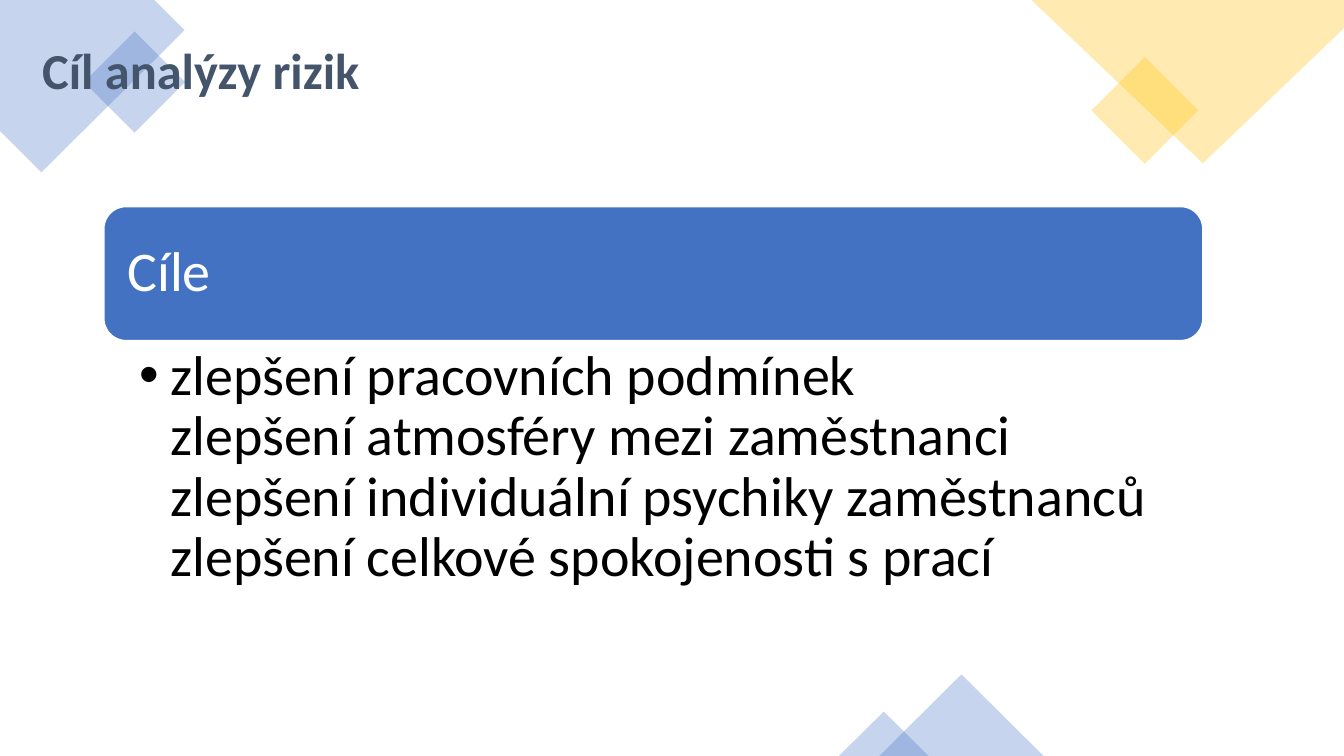
from pptx import Presentation
from pptx.dml.color import RGBColor
from pptx.enum.shapes import MSO_SHAPE as Preset
from pptx.enum.text import MSO_ANCHOR as Anchor
from pptx.oxml.ns import qn
from pptx.util import Inches, Pt
from lxml.etree import SubElement

BLUE, GOLD, WHITE, BLACK = "4472C4", "FFC000", "FFFFFF", "000000"

presentation = Presentation()
presentation.slide_width = Inches(13.33)
presentation.slide_height = Inches(7.5)
slide = presentation.slides.add_slide(presentation.slide_layouts[6])
shapes = slide.shapes


def share(*percents):
    sides = (presentation.slide_width, presentation.slide_height) * 2
    return [round(side * percent / 100) for side, percent in zip(sides, percents)]


def paint(fill, colour):
    fill.solid()
    fill.fore_color.rgb = RGBColor.from_string(colour)


corners = [
    (BLUE, [(0, 0), (11.48, 0), (13.73, 4), (3.08, 22.8), (0, 17.33)]),
    (GOLD, [(76.74, 0), (100, 0), (100, 3.73), (89.5, 21.6)]),
]
ornaments = [
    (BLUE, Preset.RECTANGLE, 315, (7.35, 6.13, 5.33, 9.47)),
    (GOLD, Preset.RECTANGLE, 315, (82.37, 9.6, 5.63, 10)),
    (BLUE, Preset.ISOSCELES_TRIANGLE, 0, (65.42, 89.2, 12.23, 10.8)),
    (BLUE, Preset.ISOSCELES_TRIANGLE, 0, (62.42, 94.13, 6.68, 5.87)),
]

decorations = []
for colour, points in corners:
    start, *others = [share(*point) for point in points]
    builder = shapes.build_freeform(*start)
    builder.add_line_segments(others, close=True)
    decorations.append((builder.convert_to_shape(), colour))
for colour, preset, rotation, box in ornaments:
    shape = shapes.add_shape(preset, *share(*box))
    shape.rotation = rotation
    decorations.append((shape, colour))

for shape, colour in decorations:
    shape.shadow.inherit = False
    shape.line.fill.background()
    paint(shape.fill, colour)
    tint = shape._element.spPr.find(".//" + qn("a:srgbClr"))
    SubElement(tint, qn("a:alpha"), val="30000")

title = shapes.add_textbox(*share(2.4, 2.67, 86.27, 12.93))
bar = shapes.add_shape(Preset.ROUNDED_RECTANGLE, *share(7.73, 27.33, 81.77, 17.73))
bar.shadow.inherit = False
paint(bar.fill, "4372C3")
paint(bar.line.fill, WHITE)
bar.line.width = Pt(1)
goals = shapes.add_textbox(*share(7.73, 45.07, 81.77, 40.27))

texts = [
    (title, ["Cíl analýzy rizik"], 36, True, "44546A", Anchor.MIDDLE, 1, (0.1, 0.05, 0.1)),
    (bar, ["Cíle"], 40, False, WHITE, Anchor.MIDDLE, 0.9, (0.17, 0.17, 0.17)),
    (goals, [
        "zlepšení pracovních podmínek",
        "zlepšení atmosféry mezi zaměstnanci",
        "zlepšení individuální psychiky zaměstnanců",
        "zlepšení celkové spokojenosti s prací",
    ], 40, False, BLACK, Anchor.TOP, 0.9, (0.35, 0.06, 0.31)),
]
for shape, lines, size, bold, colour, anchor, spacing, (left, vertical, right) in texts:
    frame = shape.text_frame
    frame.word_wrap = True
    frame.vertical_anchor = anchor
    frame.margin_left, frame.margin_right = Inches(left), Inches(right)
    frame.margin_top = frame.margin_bottom = Inches(vertical)
    paragraph = frame.paragraphs[0]
    paragraph.alignment = 1
    paragraph.line_spacing = spacing
    for number, line in enumerate(lines):
        if number:
            paragraph.add_line_break()
        run = paragraph.add_run()
        run.text = line
        run.font.name = "Calibri"
        run.font.size = Pt(size)
        run.font.bold = bold
        paint(run.font.fill, colour)
    for line_break in paragraph._p.findall(qn("a:br")):
        SubElement(line_break, qn("a:rPr"), sz=str(size * 100))

properties = goals.text_frame.paragraphs[0]._p.get_or_add_pPr()
properties.set("marL", str(Inches(0.31)))
properties.set("indent", str(-Inches(0.31)))
bullet_colour = SubElement(properties, qn("a:buClr"))
SubElement(bullet_colour, qn("a:srgbClr"), val=BLACK)
SubElement(properties, qn("a:buFont"), typeface="Arial")
SubElement(properties, qn("a:buChar"), char="•")

presentation.save("out.pptx")
